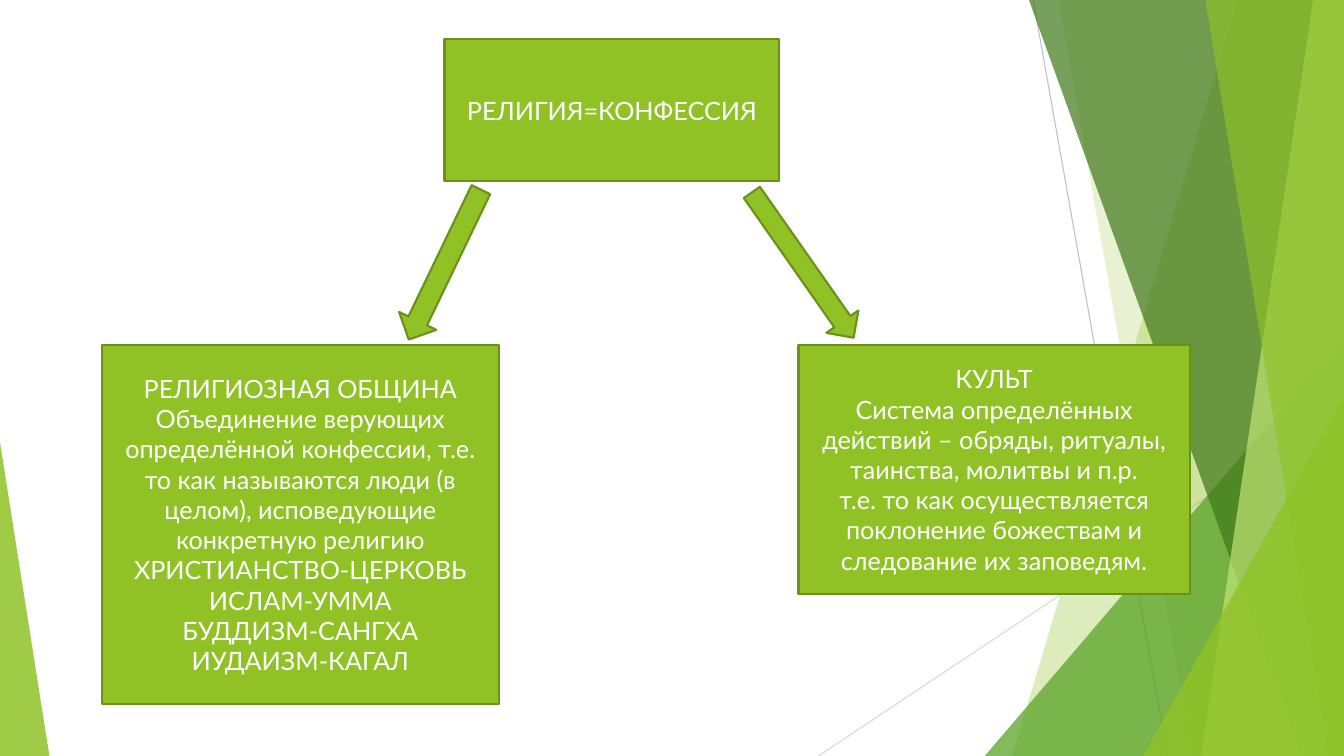
from pptx import Presentation
from pptx.dml.color import RGBColor
from pptx.enum.shapes import MSO_CONNECTOR, MSO_SHAPE
from pptx.enum.text import MSO_ANCHOR, PP_ALIGN
from pptx.oxml.ns import qn
from pptx.oxml.xmlchemy import OxmlElement
from pptx.util import Pt

WIDTH, HEIGHT = 960, 540
COLORS = {
    "lime": "90C226", "green": "54A021", "forest": "3F7819", "pale": "C0E474",
    "edge": "6B901C", "text": "FFFFFF", "gray": "BFBFBF", "silver": "D9D9D9",
}


class SlideBuilder:
    """Draws the elements of one slide in a shared style."""

    def __init__(self, s, font="Lato", size=18, line_width=1.5):
        self.s, self.font, self.size, self.line_width = s, font, size, line_width

    def color(self, name):
        return RGBColor.from_string(COLORS[name])

    def rule(self, x1, y1, x2, y2, color):
        c = self.s.shapes.add_connector(
            MSO_CONNECTOR.STRAIGHT, Pt(x1), Pt(y1), Pt(x2), Pt(y2))
        c.line.color.rgb = self.color(color)
        c.line.width = Pt(0.75)
        c._element.spPr.append(OxmlElement("a:effectLst"))

    def tint(self, sp, color, opacity):
        sp.shadow.inherit = False
        sp.fill.solid()
        sp.fill.fore_color.rgb = self.color(color)
        sp.line.fill.background()
        alpha = OxmlElement("a:alpha")
        alpha.set("val", str(opacity * 1000))
        next(sp._element.spPr.iter(qn("a:srgbClr"))).append(alpha)

    def panel(self, top_x, bottom_x, color, opacity):
        fb = self.s.shapes.build_freeform(Pt(top_x), 0)
        corners = [(WIDTH, 0), (WIDTH, HEIGHT), (bottom_x, HEIGHT)]
        fb.add_line_segments([(Pt(x), Pt(y)) for x, y in corners], close=True)
        self.tint(fb.convert_to_shape(), color, opacity)

    def triangle(self, x, y, w, apex, color, opacity):
        sp = self.s.shapes.add_shape(
            MSO_SHAPE.ISOSCELES_TRIANGLE, Pt(x), Pt(y), Pt(w), Pt(HEIGHT - y))
        sp.adjustments[0] = apex
        self.tint(sp, color, opacity)

    def block(self, kind, x, y, w, h):
        sp = self.s.shapes.add_shape(kind, Pt(x), Pt(y), Pt(w), Pt(h))
        sp.shadow.inherit = False
        sp.fill.solid()
        sp.fill.fore_color.rgb = self.color("lime")
        sp.line.color.rgb = self.color("edge")
        sp.line.width = Pt(self.line_width)
        return sp

    def box(self, x, y, w, h, lines):
        tf = self.block(MSO_SHAPE.RECTANGLE, x, y, w, h).text_frame
        tf.word_wrap = True
        tf.vertical_anchor = MSO_ANCHOR.MIDDLE
        for i, line in enumerate(lines):
            p = tf.add_paragraph() if i else tf.paragraphs[0]
            p.alignment = PP_ALIGN.CENTER
            r = p.add_run()
            r.text = line
            r.font.name = self.font
            r.font.size = Pt(self.size)
            r.font.color.rgb = self.color("text")

    def arrow(self, x, y, w, h, angle):
        self.block(MSO_SHAPE.DOWN_ARROW, x, y, w, h).rotation = angle


def main():
    prs = Presentation()
    prs.slide_width, prs.slide_height = Pt(WIDTH), Pt(HEIGHT)
    b = SlideBuilder(prs.slides.add_slide(prs.slide_layouts[6]))

    b.rule(738, 0, 834, HEIGHT, "gray")
    b.rule(WIDTH, 290, 584.6, HEIGHT, "silver")
    b.panel(884, 723, "lime", 30)
    b.panel(756, 852, "lime", 20)
    b.triangle(703.4, 240, 256.6, 1, "green", 72)
    b.panel(735, 929.5, "forest", 70)
    b.panel(938, 858, "pale", 70)
    b.panel(861, 949, "lime", 65)
    b.triangle(816.5, 283, 143.5, 1, "lime", 80)
    b.triangle(0, 316, 35.3, 0, "lime", 85)

    b.box(317.5, 28, 239.3, 101.5, ["РЕЛИГИЯ=КОНФЕССИЯ"])
    b.box(72.7, 246.3, 283.7, 256.5, [
        "РЕЛИГИОЗНАЯ ОБЩИНА",
        "Объединение верующих определённой конфессии, т.е. то как называются "
        "люди (в целом), исповедующие конкретную религию",
        "ХРИСТИАНСТВО-ЦЕРКОВЬ",
        "ИСЛАМ-УММА",
        "БУДДИЗМ-САНГХА",
        "ИУДАИЗМ-КАГАЛ",
    ])
    b.box(570.4, 246.3, 279.4, 178, [
        "КУЛЬТ",
        "Система определённых действий – обряды, ритуалы, таинства, молитвы и п.р.",
        "т.е. то как осуществляется поклонение божествам и следование их заповедям.",
    ])
    b.arrow(303, 129.6, 29.5, 118.8, 25.7)
    b.arrow(559.4, 126, 28, 126.7, 325)
    prs.save("out.pptx")


if __name__ == "__main__":
    main()
